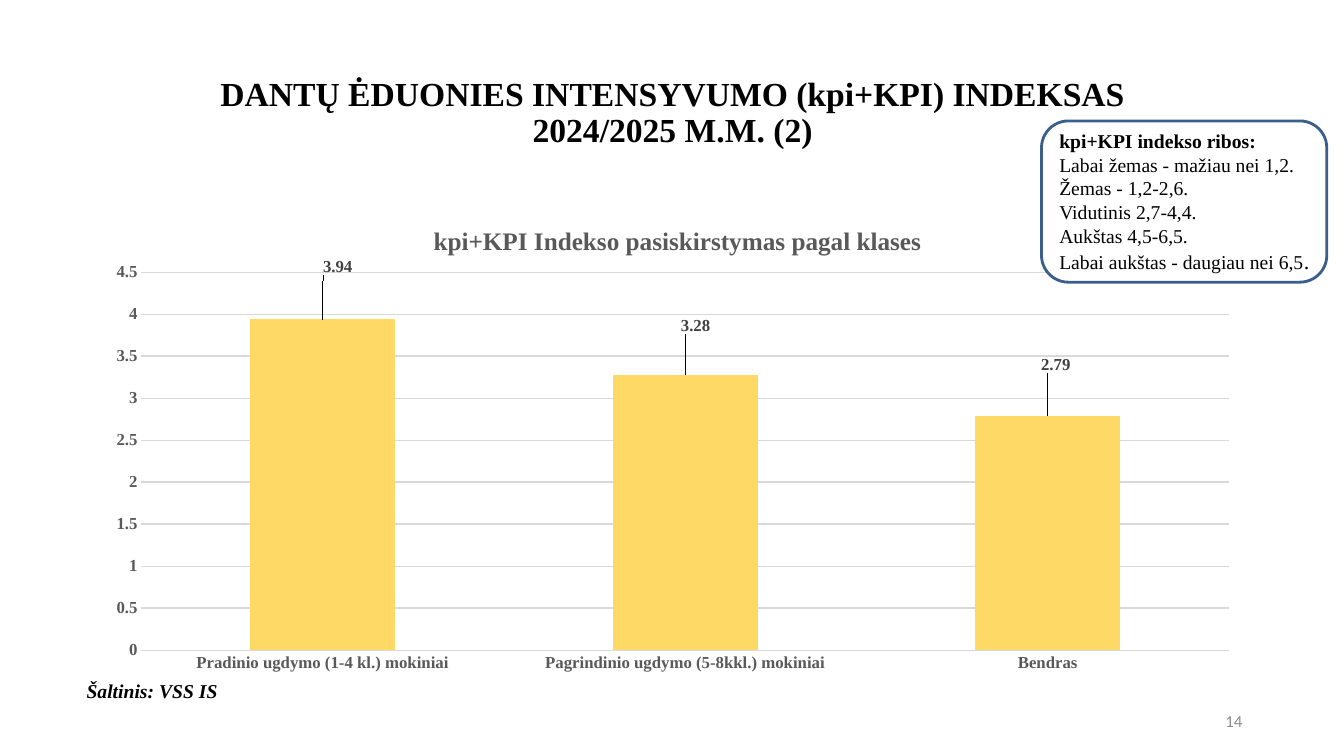
from dataclasses import dataclass

from lxml.etree import SubElement
from pptx import Presentation
from pptx.chart.data import CategoryChartData
from pptx.dml.color import RGBColor
from pptx.enum.chart import XL_CHART_TYPE, XL_LABEL_POSITION, XL_TICK_MARK
from pptx.enum.shapes import MSO_SHAPE
from pptx.enum.text import MSO_ANCHOR, PP_ALIGN
from pptx.oxml import parse_xml
from pptx.oxml.ns import nsdecls, qn
from pptx.util import Inches, Pt


@dataclass(frozen=True)
class Theme:
    """Colours, fonts and type sizes of the slide."""
    serif: str = "Times New Roman"
    sans: str = "Calibri"
    ink: str = "000000"
    paper: str = "FFFFFF"
    axis: str = "595959"
    label: str = "404040"
    grid: str = "D9D9D9"
    bar: str = "FFD966"
    border: str = "3A5F8C"
    muted: str = "8C8C8C"
    heading: int = 24
    chart_title: int = 18
    full_stop: int = 16
    body: int = 14
    small: int = 12


class IndexSlide:
    """Holds the theme and the slide, and adds each kind of element."""

    def __init__(self, slide, theme):
        self.slide = slide
        self.theme = theme

    def set_font(self, font, size, color, name=None, **styles):
        values = {"name": name or self.theme.serif, "size": Pt(size), **styles}
        for attribute, value in values.items():
            setattr(font, attribute, value)
        font.color.rgb = RGBColor.from_string(color)

    def set_layout(self, parent, index, **values):
        for old in parent.findall(qn("c:layout")):
            parent.remove(old)
        layout = parse_xml(f"<c:layout {nsdecls('c')}><c:manualLayout/></c:layout>")
        for tag, value in values.items():
            SubElement(layout[0], qn(f"c:{tag}")).set("val", str(value))
        parent.insert(index, layout)

    def place(self, shape, box):
        for attribute, value in zip(("left", "top", "width", "height"), box):
            setattr(shape, attribute, Inches(value))

    def add_title(self, lines, box):
        title = self.slide.shapes.title
        self.place(title, box)
        title.text_frame.vertical_anchor = MSO_ANCHOR.MIDDLE
        paragraph = title.text_frame.paragraphs[0]
        paragraph.alignment = PP_ALIGN.CENTER
        paragraph.line_spacing = 0.9
        for number, line in enumerate(lines):
            if number:
                paragraph.add_line_break()
            run = paragraph.add_run()
            run.text = line
            self.set_font(run.font, self.theme.heading, self.theme.ink, bold=True)

    def add_text(self, text, box, size, color, align=PP_ALIGN.LEFT,
                 anchor=MSO_ANCHOR.TOP, wrap=True, **styles):
        frame = self.slide.shapes.add_textbox(*map(Inches, box)).text_frame
        frame.word_wrap = wrap
        frame.vertical_anchor = anchor
        paragraph = frame.paragraphs[0]
        paragraph.alignment = align
        run = paragraph.add_run()
        run.text = text
        self.set_font(run.font, size, color, **styles)

    def add_legend_box(self, lines, box):
        theme = self.theme
        panel = self.slide.shapes.add_shape(
            MSO_SHAPE.ROUNDED_RECTANGLE, *map(Inches, box))
        panel.shadow.inherit = False
        panel.fill.solid()
        panel.fill.fore_color.rgb = RGBColor.from_string(theme.paper)
        panel.line.color.rgb = RGBColor.from_string(theme.border)
        panel.line.width = Pt(2)
        frame = panel.text_frame
        frame.word_wrap = True
        frame.vertical_anchor = MSO_ANCHOR.MIDDLE
        frame.margin_right = Inches(0.05)
        for number, runs in enumerate(lines):
            paragraph = frame.add_paragraph() if number else frame.paragraphs[0]
            paragraph.alignment = PP_ALIGN.LEFT
            for text, size in runs:
                run = paragraph.add_run()
                run.text = text
                self.set_font(run.font, size, theme.ink, bold=number == 0)

    def add_column_chart(self, heading, values, label_shifts, box):
        theme = self.theme
        data = CategoryChartData()
        data.categories = list(values)
        data.add_series("Series 1", list(values.values()))
        chart = self.slide.shapes.add_chart(
            XL_CHART_TYPE.COLUMN_CLUSTERED, *map(Inches, box), data).chart
        chart.has_legend = False
        self.set_font(chart.font, 10, theme.ink, theme.sans)

        title = chart.chart_title
        title.text_frame.text = heading
        title.include_in_layout = False
        self.set_font(title.text_frame.paragraphs[0].runs[0].font,
                      theme.chart_title, theme.axis, bold=True)
        self.set_layout(title._element, 1, xMode="edge", yMode="edge",
                        x=0.29, y=0.04)
        self.set_layout(chart._chartSpace.chart.plotArea, 0, layoutTarget="inner",
                        xMode="edge", yMode="edge", x=0.042, y=0.147, w=0.938, h=0.788)

        for axis in (chart.category_axis, chart.value_axis):
            axis.major_tick_mark = axis.minor_tick_mark = XL_TICK_MARK.NONE
            axis.format.line.fill.background()
            self.set_font(axis.tick_labels.font, theme.small, theme.axis, bold=True)
        scale = {"minimum_scale": 0, "maximum_scale": 4.5, "major_unit": 0.5}
        for attribute, value in scale.items():
            setattr(chart.value_axis, attribute, value)
        grid = chart.value_axis.major_gridlines.format.line
        grid.color.rgb = RGBColor.from_string(theme.grid)
        grid.width = Pt(0.75)

        plot = chart.plots[0]
        plot.gap_width = 150
        plot.vary_by_categories = False
        series = plot.series[0]
        series.format.fill.solid()
        series.format.fill.fore_color.rgb = RGBColor.from_string(theme.bar)
        series.data_labels.show_value = True
        self.set_font(series.data_labels.font, theme.small, theme.label, bold=True)
        for number in range(len(values)):
            label = series.points[number].data_label
            self.set_font(label.font, theme.small, theme.label, bold=True)
            label.position = XL_LABEL_POSITION.OUTSIDE_END
        for point, (x, y) in zip(chart._chartSpace.xpath(".//c:dLbl"), label_shifts):
            self.set_layout(point, 1, x=x, y=y)


def main():
    theme = Theme()
    deck = Presentation()
    deck.slide_width, deck.slide_height = Inches(13.33), Inches(7.5)
    page = IndexSlide(deck.slides.add_slide(deck.slide_layouts[5]), theme)
    page.add_title(["DANTŲ ĖDUONIES INTENSYVUMO (kpi+KPI) INDEKSAS",
                    "2024/2025 M.M. (2)"], (0.92, 0.4, 11.5, 1.45))
    page.add_column_chart(
        "kpi+KPI Indekso pasiskirstymas pagal klases",
        {"Pradinio ugdymo (1-4 kl.) mokiniai": 3.94,
         "Pagrindinio ugdymo (5-8kkl.) mokiniai": 3.28,
         "Bendras": 2.79},
        [(0.013, -0.083), (0.009, -0.075), (0.007, -0.08)],
        (0.92, 2, 11.5, 4.76))
    ranges = ["kpi+KPI indekso ribos:", "Labai žemas - mažiau nei 1,2.",
              "Žemas - 1,2-2,6.", "Vidutinis 2,7-4,4.", "Aukštas 4,5-6,5."]
    page.add_legend_box(
        [[(text, theme.body)] for text in ranges]
        + [[("Labai aukštas - daugiau nei 6,5", theme.body), (".", theme.full_stop)]],
        (10.33, 1.2, 2.83, 1.6))
    page.add_text("Šaltinis: VSS IS", (0.76, 6.69, 1.51, 0.34), theme.body,
                  theme.ink, wrap=False, bold=True, italic=True)
    page.add_text("14", (9.42, 6.95, 3, 0.4), theme.small, theme.muted,
                  PP_ALIGN.RIGHT, MSO_ANCHOR.MIDDLE, name=theme.sans)
    deck.save("out.pptx")


if __name__ == "__main__":
    main()
